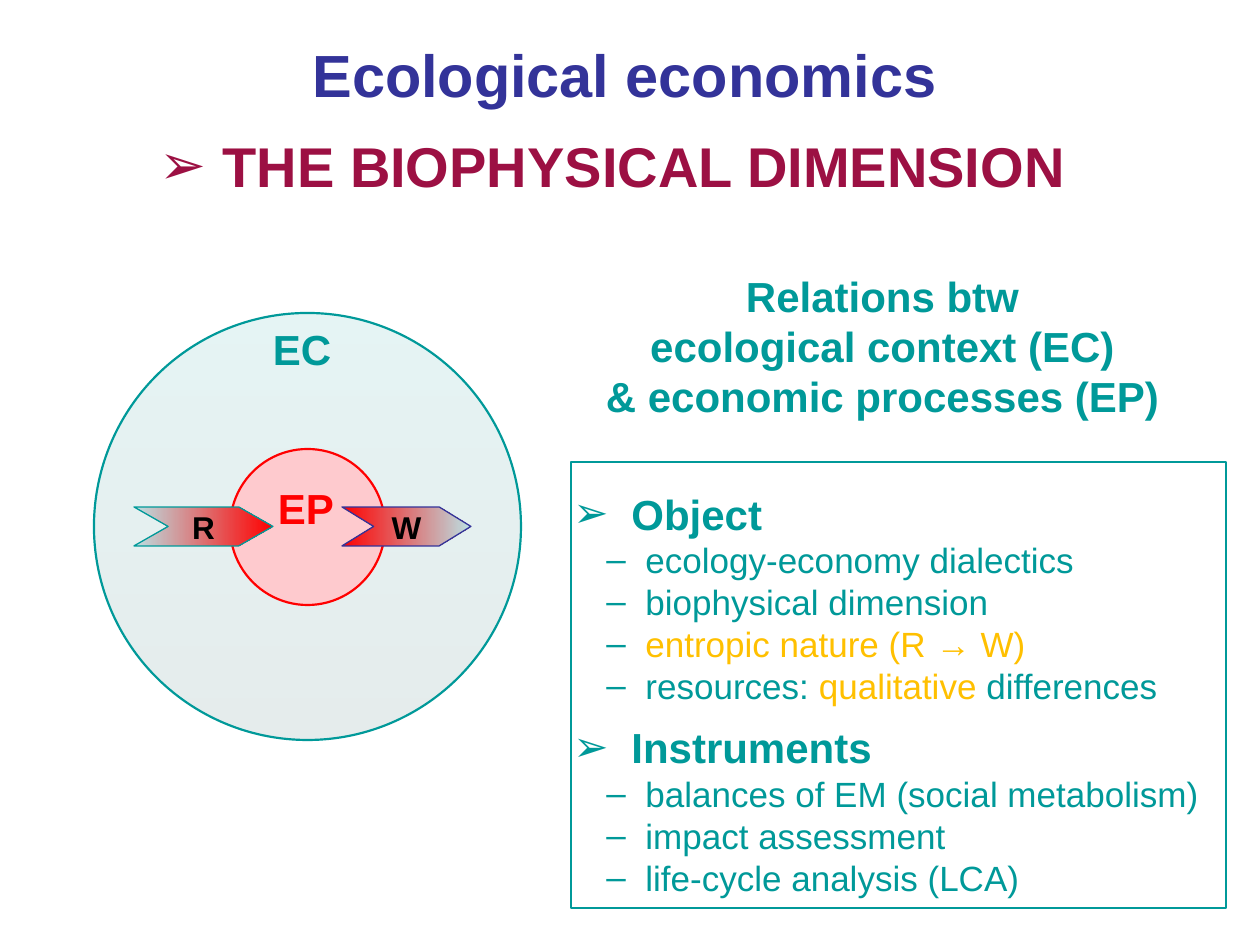
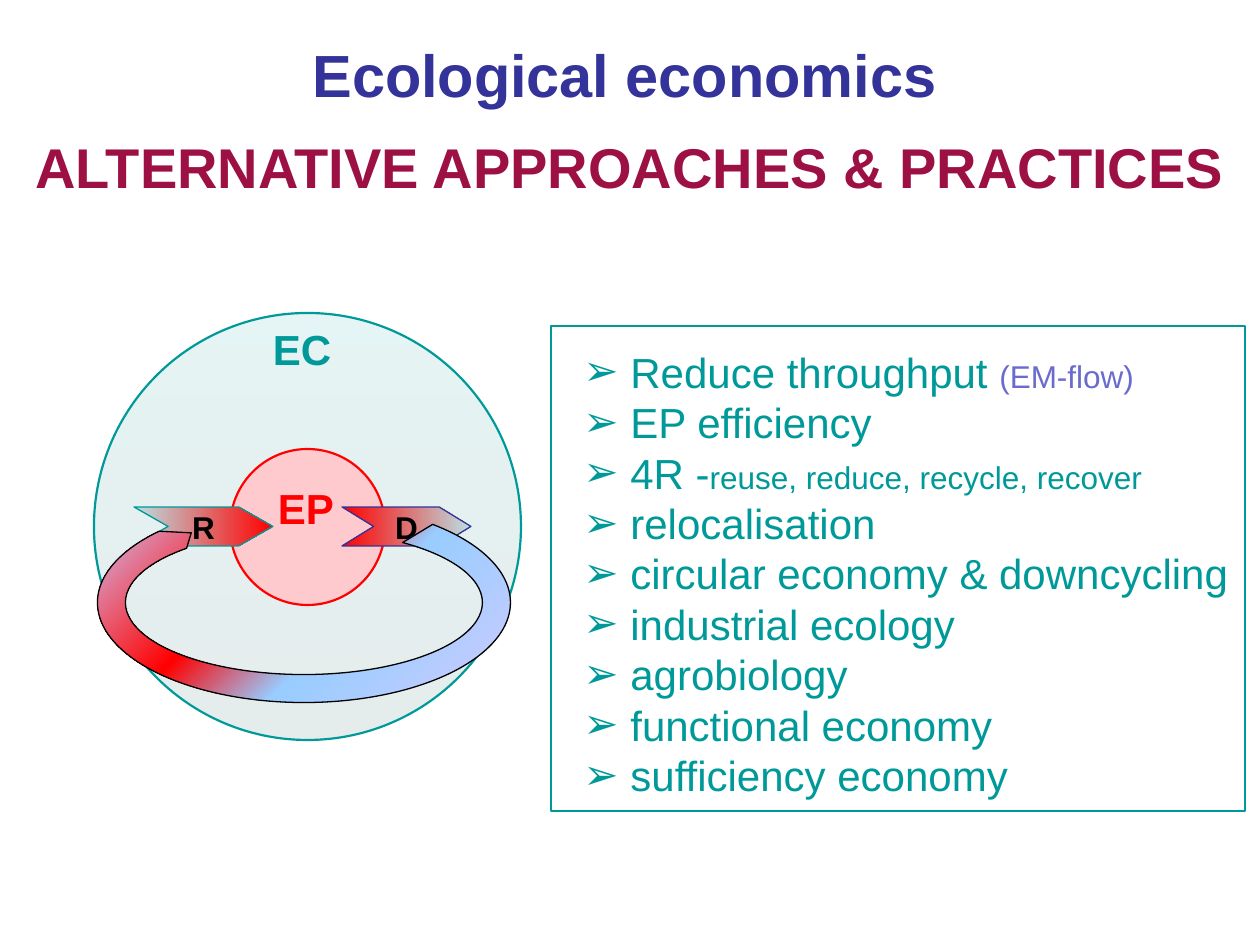
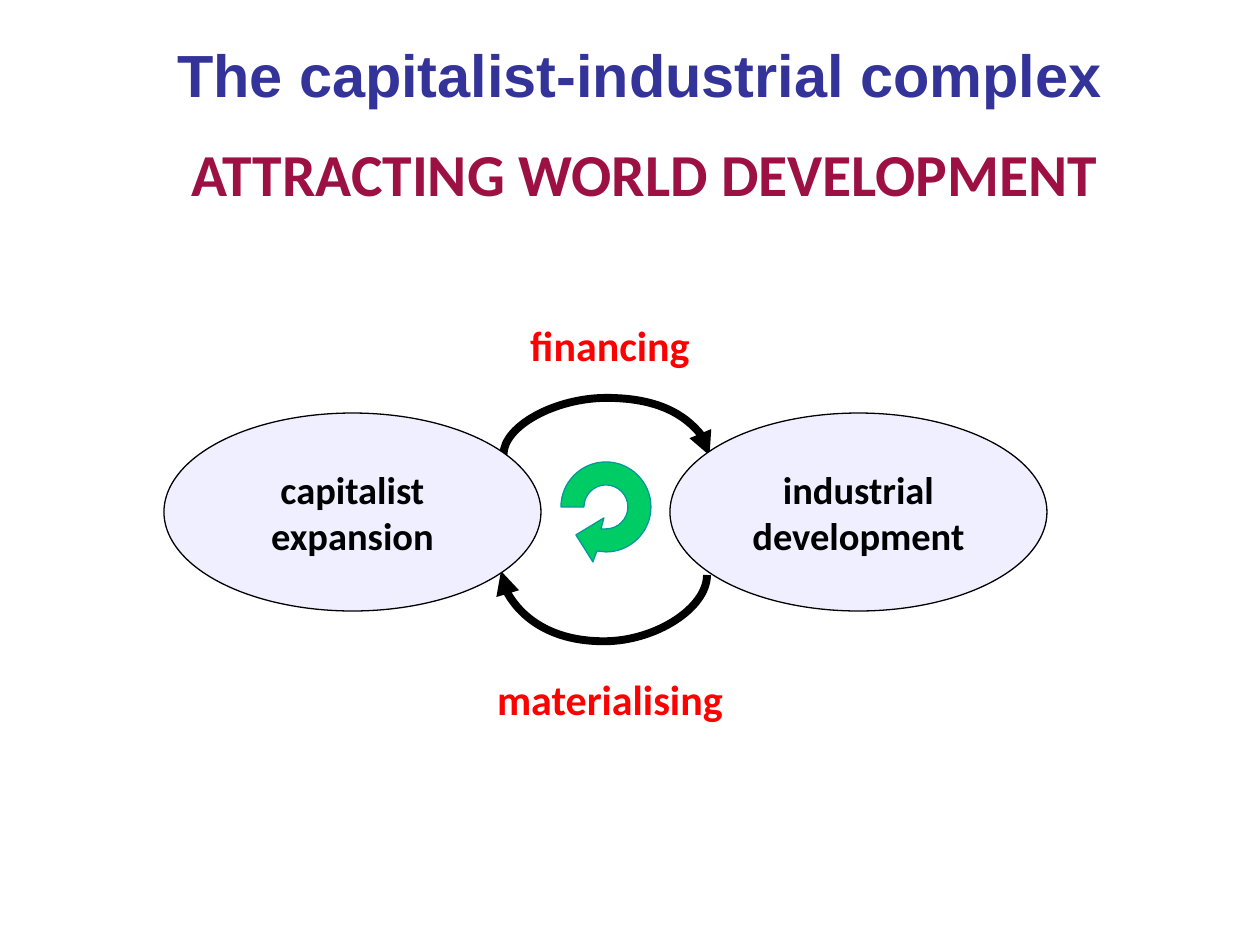
from lxml import etree
from pptx import Presentation
from pptx.dml.color import RGBColor
from pptx.enum.shapes import MSO_CONNECTOR, MSO_SHAPE
from pptx.enum.text import MSO_ANCHOR, PP_ALIGN
from pptx.oxml.ns import qn
from pptx.util import Emu, Pt

CURVE = MSO_CONNECTOR.CURVE
RECT, OVAL = MSO_SHAPE.RECTANGLE, MSO_SHAPE.OVAL
CHEVRON, CIRCULAR_ARROW = MSO_SHAPE.CHEVRON, MSO_SHAPE.CIRCULAR_ARROW
LEFT, CENTER = PP_ALIGN.LEFT, PP_ALIGN.CENTER
TOP, MIDDLE = MSO_ANCHOR.TOP, MSO_ANCHOR.MIDDLE

PX_PER_INCH = 126
QUARTER = 0.55  # Bezier handle of a quarter circle, as a share of its radius
COLORS = {
    "title": "333399", "subtitle": "9C1043", "teal": "009999",
    "dark_teal": "004747", "red": "FF0000", "pink": "FECACE",
    "ice": "BBE0E3", "amber": "FFC000", "violet": "6B6BCF",
    "lavender": "CCCCFF", "sky": "99CCFF", "pale": "EFEFFF",
    "green": "00CC66", "black": "000000",
}


def px(n):
    return Emu(round(n * 914400 / PX_PER_INCH))


def rgb(name):
    return RGBColor.from_string(COLORS[name])


def child(parent, tag, **attrs):
    el = etree.SubElement(parent, qn(tag))
    for key, value in attrs.items():
        el.set(key, str(value))
    return el


# Text
def set_font(font, size=None, color=None, bold=None, name=None):
    if size:
        font.size = Pt(size)
    if color:
        font.color.rgb = rgb(color)
    if bold is not None:
        font.bold = bold
    if name:
        font.name = name


def set_bullet(p, char, color, margin, hang):
    pPr = p._p.get_or_add_pPr()
    pPr.set("marL", str(px(margin)))
    pPr.set("indent", str(-px(hang)))
    child(child(pPr, "a:buClr"), "a:srgbClr", val=COLORS[color])
    child(pPr, "a:buFont", typeface="Arial")
    child(pPr, "a:buChar", char=char)


def write(p, runs, size, color, bold=False, name="Arial", align=LEFT, bullet=None):
    """Fill a paragraph; runs is a string or a list of (text, font overrides)."""
    if bullet:
        set_bullet(p, *bullet)
    p.alignment = align
    set_font(p.font, size, color, bold, name)
    if isinstance(runs, str):
        p.text = runs
        return
    for text, changes in runs:
        r = p.add_run()
        r.text = text
        set_font(r.font, **changes)


def next_paragraph(tf):
    first = tf.paragraphs[0]
    return tf.add_paragraph() if first.runs else first


def add_box(slide, x, y, w, h, wrap=True, inset=True):
    tf = slide.shapes.add_textbox(px(x), px(y), px(w), px(h)).text_frame
    tf.word_wrap = wrap
    tf.vertical_anchor = TOP
    if not inset:
        tf.margin_left = tf.margin_top = tf.margin_right = tf.margin_bottom = 0
    return tf


def add_text(slide, box, text, size, color, **style):
    tf = add_box(slide, *box)
    write(tf.paragraphs[0], text, size, color, bold=True, align=CENTER, **style)


def add_label(slide, box, text, color):
    tf = add_box(slide, *box, wrap=False, inset=False)
    write(tf.paragraphs[0], text, 24, color, bold=True)


def add_title(slide, text, x=199, w=851):
    add_text(slide, (x, 32, w, 84), text, 34, "title")


# Shapes
def set_gradient(sp, stops, angle=None):
    """Stops are (percent, colour, opacity); without an angle, radial from the corner."""
    sp.fill.gradient()
    grad = sp._element.spPr.find(qn("a:gradFill"))
    for el in list(grad):
        grad.remove(el)
    grad.set("rotWithShape", "1")
    gs_list = child(grad, "a:gsLst")
    for pos, color, opacity in stops:
        gs = child(gs_list, "a:gs", pos=pos * 1000)
        clr = child(gs, "a:srgbClr", val=COLORS[color])
        if opacity < 100:
            child(clr, "a:alpha", val=opacity * 1000)
    if angle is None:
        radial = child(grad, "a:path")
        radial.set("path", "circle")
        child(radial, "a:fillToRect", r=100000, b=100000)
    else:
        child(grad, "a:lin", ang=angle * 60000, scaled=1)


def style_shape(sp, line, width, fill=None):
    sp.shadow.inherit = False
    if line:
        sp.line.color.rgb = rgb(line)
        sp.line.width = Pt(width)
    else:
        sp.line.fill.background()
    if fill:
        sp.fill.solid()
        sp.fill.fore_color.rgb = rgb(fill)
    else:
        sp.fill.background()


def add_shape(slide, kind, box, line, width=0.75, fill=None, adj=()):
    sp = slide.shapes.add_shape(kind, *map(px, box))
    style_shape(sp, line, width, fill)
    for i, value in enumerate(adj):
        sp.adjustments[i] = value
    return sp


def caption(sp, text, size, name="Arial"):
    tf = sp.text_frame
    tf.word_wrap = False
    tf.vertical_anchor = MIDDLE
    write(tf.paragraphs[0], text, size, "black", bold=True, name=name, align=CENTER)


def add_flow(slide, x, w, letter, colors, line, adj):
    sp = add_shape(slide, CHEVRON, (x, 507, w, 39), line, adj=[adj])
    set_gradient(sp, [(0, colors[0], 100), (100, colors[1], 100)], angle=0)
    caption(sp, letter, 18)


def add_context_diagram(slide, output):
    """Economic process inside its ecological context, with input and output."""
    context = (94, 313, 427, 427)
    tint = add_shape(slide, OVAL, context, None)
    set_gradient(tint, [(0, "teal", 10), (100, "dark_teal", 10)], angle=90)
    add_shape(slide, OVAL, context, "teal", 1.25)
    add_shape(slide, OVAL, (230, 449, 155, 156), "red", 1.25, "pink")
    add_label(slide, (273, 324, 59, 50), "EC", "teal")
    add_label(slide, (278, 483, 57, 50), "EP", "red")
    add_flow(slide, 134, 139, "R", ("ice", "red"), "teal", 0.877)
    add_flow(slide, 342, 129, output, ("red", "ice"), "title", 0.814)


def add_recycling_loop(slide):
    sp = add_shape(slide, CIRCULAR_ARROW, (204, 396, 200, 413), "black",
                   adj=(0.14, 3.678, 177.37, 35.234, 0.07))
    sp.rotation = 270
    set_gradient(sp, [(0, "lavender", 100), (38, "red", 100),
                      (60, "sky", 100), (100, "lavender", 100)])


def add_curved_arrow(slide, x, y, w, h, rotation, bulge):
    """Connector drawn upright, then turned; bulge is its depth in px."""
    cxn = slide.shapes.add_connector(CURVE, px(x), px(y + h), px(x + w), px(y))
    cxn.rotation = rotation
    cxn.line.color.rgb = rgb("black")
    cxn.line.width = Pt(4.5)
    spPr = cxn._element.spPr
    geom = spPr.find(qn("a:prstGeom"))
    guides = geom.find(qn("a:avLst"))
    if guides is None:
        guides = child(geom, "a:avLst")
    child(guides, "a:gd", name="adj1", fmla=f"val {round(-bulge / w * 100000)}")
    child(spPr.find(qn("a:ln")), "a:tailEnd", type="triangle")
    child(spPr, "a:effectLst")


def add_outline(slide, start, segments):
    """Closed outline; a segment is one point (line) or three (Bezier curve)."""
    points = [(px(x), px(y)) for segment in segments for x, y in segment]
    builder = slide.shapes.build_freeform(px(start[0]), px(start[1]))
    builder.add_line_segments(points, close=True)
    sp = builder.convert_to_shape()
    lines = sp._element.spPr.findall(".//" + qn("a:lnTo"))
    for segment in segments:
        group, lines = lines[:len(segment)], lines[len(segment):]
        if len(group) == 3:
            group[0].tag = qn("a:cubicBezTo")
            for el in group[1:]:
                group[0].append(el[0])
                el.getparent().remove(el)
    return sp


def add_cycle_arrow(slide, cx, cy, inner, outer):
    def quarters(radius, directions):
        """Bezier quarter circles from each direction to the next."""
        for (ax, ay), (bx, by) in zip(directions, directions[1:]):
            yield [(cx + radius * (ax + QUARTER * bx), cy + radius * (ay + QUARTER * by)),
                   (cx + radius * (bx + QUARTER * ax), cy + radius * (by + QUARTER * ay)),
                   (cx + radius * bx, cy + radius * by)]

    down, right, up, left = (0, 1), (1, 0), (0, -1), (-1, 0)
    start = (cx - 5, cy + inner)
    segments = [
        [(cx, cy + inner)],
        *quarters(inner, [down, right, up, left]),
        [(cx - outer, cy)],
        *quarters(outer, [left, up, right, down]),
        [(cx - 9, cy + outer - 1)],
        [(cx - 13, cy + 55)],
        [(cx - 30, cy + 28)],
        [(cx - 2, cy + 11)],
    ]
    style_shape(add_outline(slide, start, segments), "teal", 0.75, "green")


# Slides
def biophysical_slide(slide):
    add_title(slide, "Ecological economics")
    add_text(slide, (560, 264, 645, 165),
             "Relations btw\vecological context (EC)\v& economic processes (EP)",
             24, "teal")
    add_shape(slide, RECT, (571, 462, 655, 446), "teal")
    amber = {"color": "amber"}
    sections = [
        ("Object", 1.0, [
            "ecology-economy dialectics",
            "biophysical dimension",
            [("entropic nature (R ", amber), ("→ ", {"color": "amber", "bold": True}),
             ("W)", amber)],
            [("resources: ", {}), ("qualitative", amber), (" differences", {})],
        ]),
        ("Instruments", 1.3, [
            "balances of EM (social metabolism)",
            "impact assessment",
            "life-cycle analysis (LCA)",
        ]),
    ]
    tf = add_box(slide, 561, 482, 675, 427)
    for heading, spacing, items in sections:
        p = next_paragraph(tf)
        write(p, heading, 24, "teal", bold=True, bullet=("➢", "teal", 58, 58))
        p.line_spacing = spacing
        for item in items:
            write(next_paragraph(tf), item, 20, "teal", bullet=("–", "teal", 72, 39))
    add_context_diagram(slide, "W")
    add_text(slide, (65, 125, 1111, 81), "THE BIOPHYSICAL DIMENSION ", 32, "subtitle",
             bullet=("➢", "subtitle", 63, 63))


def alternatives_slide(slide):
    add_title(slide, "Ecological economics")
    add_text(slide, (0, 126, 1260, 81), "ALTERNATIVE APPROACHES & PRACTICES",
             32, "subtitle")
    add_shape(slide, RECT, (551, 326, 694, 485), "teal")
    practices = [
        [("Reduce throughput ", {}), ("(EM-flow)", {"size": 18, "color": "violet"})],
        "EP efficiency",
        [("4R -", {}), ("reuse, reduce, recycle, recover", {"size": 18})],
        "relocalisation",
        "circular economy & downcycling",
        "industrial ecology",
        "agrobiology",
        "functional economy",
        "sufficiency economy",
    ]
    tf = add_box(slide, 571, 340, 674, 471)
    for practice in practices:
        write(next_paragraph(tf), practice, 24, "teal", bullet=("➢", "teal", 47, 47))
    add_context_diagram(slide, "D")
    add_recycling_loop(slide)


def complex_slide(slide):
    add_curved_arrow(slide, 606, 352, 1, 206, 90, 57)
    add_curved_arrow(slide, 602, 470, 4, 206, 270, 66)
    add_cycle_arrow(slide, 606, 507, 22, 45)
    for x, text in ((164, "capitalist\vexpansion"), (670, "industrial\vdevelopment")):
        sp = add_shape(slide, OVAL, (x, 413, 377, 198), "black", fill="pale")
        caption(sp, text, 22, "Calibri")
    for y, text in ((313, "financing"), (667, "materialising")):
        add_text(slide, (441, y, 338, 64), text, 24, "red", name="Calibri")
    add_title(slide, "The capitalist-industrial complex", 109, 1061)
    add_text(slide, (59, 131, 1171, 84), "ATTRACTING WORLD DEVELOPMENT",
             34, "subtitle", name="Calibri")


def main():
    prs = Presentation()
    prs.slide_width, prs.slide_height = px(1260), px(945)
    blank = prs.slide_layouts[6]
    for build in (biophysical_slide, alternatives_slide, complex_slide):
        build(prs.slides.add_slide(blank))
    prs.save("out.pptx")


if __name__ == "__main__":
    main()
